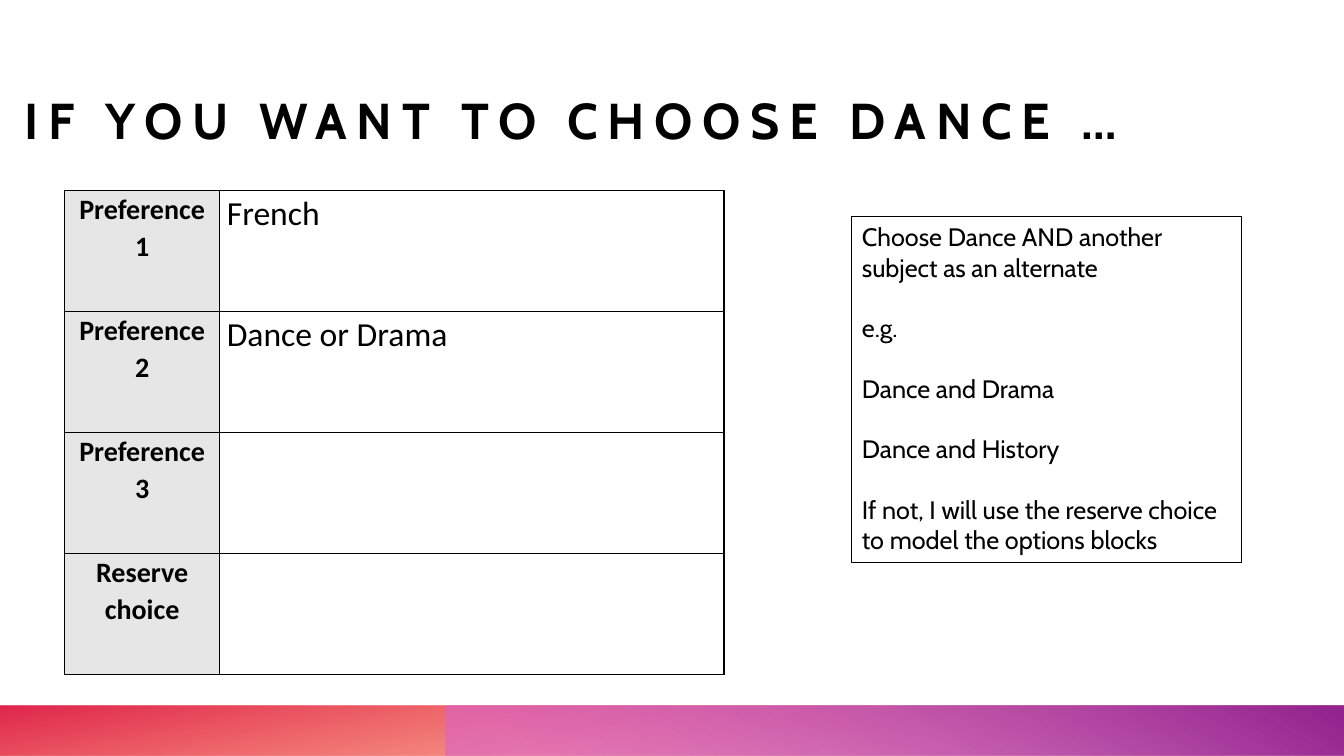
from lxml import etree
from pptx import Presentation
from pptx import util as u
from pptx.dml.color import RGBColor
from pptx.enum import shapes, text
from pptx.oxml import ns

# Content
TITLE = "IF YOU WANT TO CHOOSE DANCE …"
ROWS = [
    ("Preference 1", "French"),
    ("Preference 2", "Dance or Drama"),
    ("Preference 3", ""),
    ("Reserve choice", ""),
]
NOTES = [
    "Choose Dance AND another subject as an alternate",
    "e.g.",
    "Dance and Drama",
    "Dance and History",
    "If not, I will use the reserve choice to model the options blocks",
]
# Footer bands: left edge, angle, stops of (position, colour, opacity)
BANDS = [
    (0, 260, [(14, "FE4A00", 28), (100, "DA002F", 85)]),
    (4.42, 300, [(9, "D861D4", 55), (99, "92248E", 100)]),
]
WIDTH, HEIGHT, BAND = 13.33, 7.5, 0.5
COLS, ROW = (1.54, 5), 1.2
BLACK, GREY = "000000", "E7E6E6"


def color(code):
    return RGBColor.from_string(code)


def add(node, tag, **attrs):
    return etree.SubElement(node, ns.qn(tag), attrs)


def write(par, words, size, font, bold=False):
    run = par.add_run()
    run.text = words
    run.font.size, run.font.name, run.font.bold = u.Pt(size), font, bold
    run.font.color.rgb = color(BLACK)
    return run


def shade(shape, angle, stops):
    shape.fill.background()
    props = shape._element.spPr
    grad = etree.Element(ns.qn("a:gradFill"), rotWithShape="1")
    group = add(grad, "a:gsLst")
    for pos, code, alpha in stops:
        stop = add(group, "a:gs", pos=str(pos * 1000))
        tint = add(stop, "a:srgbClr", val=code)
        add(tint, "a:alpha", val=str(alpha * 1000))
    add(grad, "a:lin", ang=str(angle * 60000), scaled="0")
    props.replace(props.find(ns.qn("a:noFill")), grad)


def border(cell):
    props = cell._tc.get_or_add_tcPr()
    for i, side in enumerate(("a:lnL", "a:lnR", "a:lnT", "a:lnB")):
        line = etree.Element(ns.qn(side), w=str(u.Pt(1)))
        add(add(line, "a:solidFill"), "a:srgbClr", val=BLACK)
        props.insert(i, line)


def main():
    deck = Presentation()
    deck.slide_width, deck.slide_height = u.Inches(WIDTH), u.Inches(HEIGHT)
    slide = deck.slides.add_slide(deck.slide_layouts[6])

    # Footer bands
    for left, angle, stops in BANDS:
        band = slide.shapes.add_shape(
            shapes.MSO_SHAPE.RECTANGLE, u.Inches(left), u.Inches(HEIGHT - BAND),
            u.Inches(WIDTH - left), u.Inches(BAND))
        band.shadow.inherit = False
        band.line.fill.background()
        shade(band, angle, stops)

    # Title
    box = slide.shapes.add_textbox(
        u.Inches(0.24), u.Inches(0.13), u.Inches(11.2), u.Inches(1.35))
    frame = box.text_frame
    frame.word_wrap = True
    frame.vertical_anchor = text.MSO_ANCHOR.BOTTOM
    frame.margin_left = frame.margin_right = 0
    frame.margin_top = frame.margin_bottom = 0
    run = write(frame.paragraphs[0], TITLE, 36, "Cabin", True)
    run.font._element.set("spc", "700")

    # Preference table
    table = slide.shapes.add_table(
        len(ROWS), len(COLS), u.Inches(0.64), u.Inches(1.89),
        u.Inches(sum(COLS)), u.Inches(ROW * len(ROWS))).table
    table.first_row = table.horz_banding = False
    for col, width in zip(table.columns, COLS):
        col.width = u.Inches(width)
    for r, row in enumerate(ROWS):
        table.rows[r].height = u.Inches(ROW)
        for c, words in enumerate(row):
            cell = table.cell(r, c)
            cell.margin_left = cell.margin_right = u.Inches(0.07)
            cell.margin_top = cell.margin_bottom = 0
            par = cell.text_frame.paragraphs[0]
            par.line_spacing, par.space_after = 1.07, u.Pt(8)
            if c == 0:
                par.alignment = text.PP_ALIGN.CENTER
                cell.fill.solid()
                cell.fill.fore_color.rgb = color(GREY)
            else:
                cell.fill.background()
            if words:
                write(par, words, 24 if c else 20, "Calibri", c == 0)
            border(cell)

    # Advice box
    box = slide.shapes.add_textbox(
        u.Inches(8.45), u.Inches(2.15), u.Inches(3.86), u.Inches(3.43))
    box.line.color.rgb = color(BLACK)
    box.line.width = u.Pt(0.75)
    frame = box.text_frame
    frame.word_wrap = True
    for i, words in enumerate(NOTES):
        par = frame.add_paragraph() if i else frame.paragraphs[0]
        par.space_before = u.Pt(21.6 if i else 0)
        write(par, words, 18, "Cabin")

    deck.save("out.pptx")


if __name__ == "__main__":
    main()
